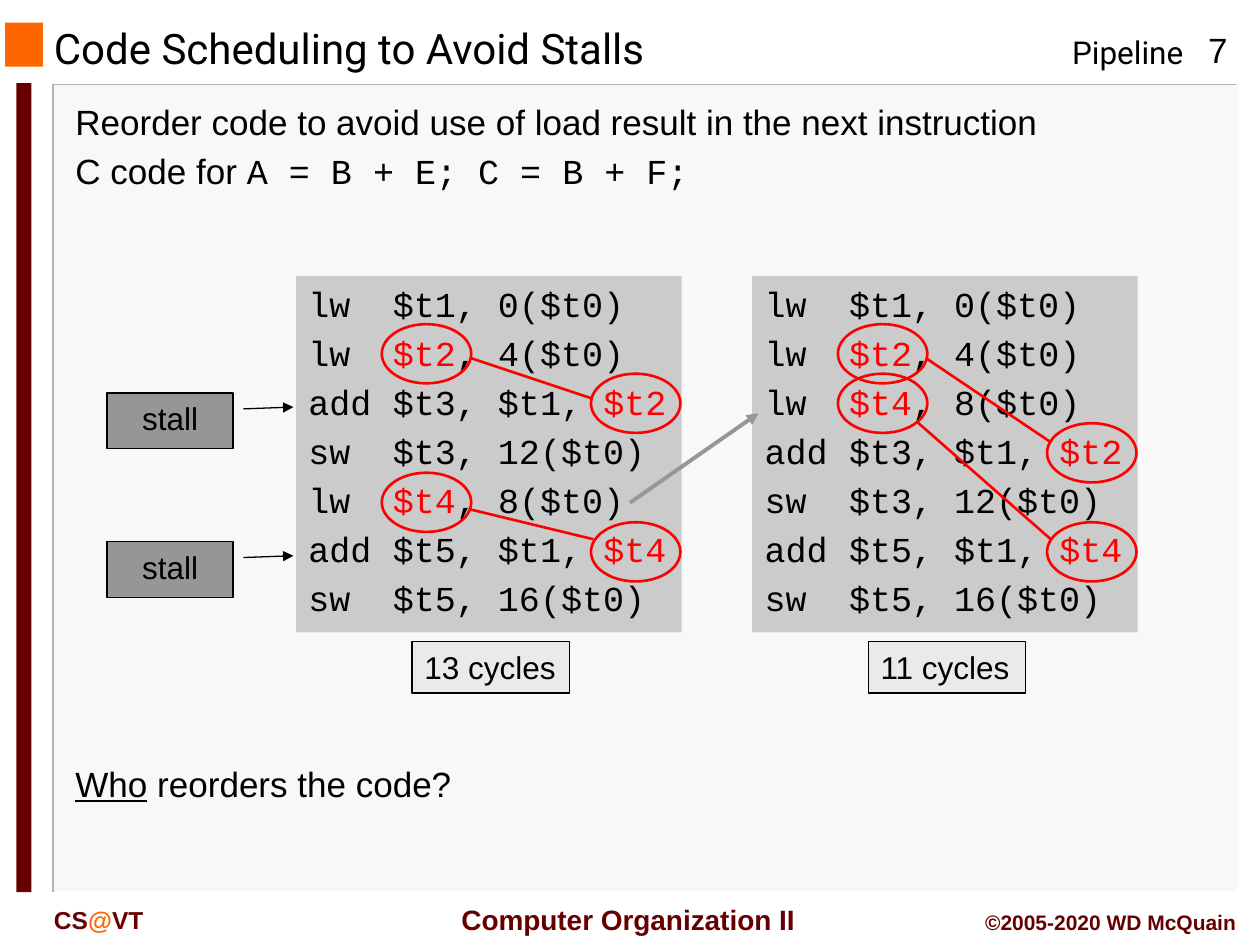
"""Build the slide on code scheduling to avoid pipeline stalls."""
from lxml import etree
from pptx import Presentation
from pptx.dml.color import RGBColor
from pptx.enum import shapes, text
from pptx.oxml import ns
from pptx.util import Inches, Pt

COLORS = {
    "black": "000000", "white": "FFFFFF", "red": "FF0000", "maroon": "660000",
    "orange": "FF6600", "panel": "F8F8F8", "edge": "B2B2B2", "code": "CBCBCB",
    "stall": "969696", "cycles": "EAEAEA",
}
SHAPE, ALIGN, ANCHOR = shapes.MSO_SHAPE, text.PP_ALIGN, text.MSO_ANCHOR
MONO = "Courier New"


class SlideBuilder:
    """Hold the style and the current slide."""

    def __init__(self, slide, font="Arial"):
        self.shapes = slide.shapes
        self.font = font

    def color(self, name):
        return RGBColor.from_string(COLORS[name])

    def outline(self, line, color, width, arrow=False):
        line.color.rgb = self.color(color)
        line.width = Pt(width)
        if arrow:
            ln = line._get_or_add_ln()
            etree.SubElement(ln, ns.qn("a:tailEnd"), type="triangle")

    def shape(self, kind, box, fill=None, line=None, width=0.75, arrow=False):
        sp = self.shapes.add_shape(kind, *map(Inches, box))
        sp.shadow.inherit = False
        if fill:
            sp.fill.solid()
            sp.fill.fore_color.rgb = self.color(fill)
        else:
            sp.fill.background()
        if line:
            self.outline(sp.line, line, width, arrow)
        else:
            sp.line.fill.background()
        return sp

    def polyline(self, points, color):
        points = [tuple(map(Inches, point)) for point in points]
        builder = self.shapes.build_freeform(*points[0], scale=1.0)
        builder.add_line_segments(points[1:], close=False)
        sp = builder.convert_to_shape()
        sp.shadow.inherit = False
        sp.fill.background()
        self.outline(sp.line, color, 1)

    def line(self, start, end, color, width, arrow=False):
        cx = self.shapes.add_connector(
            shapes.MSO_CONNECTOR.STRAIGHT, *map(Inches, start + end))
        self.outline(cx.line, color, width, arrow)
        etree.SubElement(cx._element.spPr, ns.qn("a:effectLst"))

    def add_text(self, sp, paragraphs, size, color="black", font=None, bold=False,
                 align=ALIGN.LEFT, anchor=ANCHOR.TOP, wrap=True, before=0, hang=0, tab=0):
        tf = sp.text_frame
        tf.word_wrap = wrap
        tf.vertical_anchor = anchor
        for i, runs in enumerate(paragraphs):
            p = tf.add_paragraph() if i else tf.paragraphs[0]
            p.alignment = align
            pPr = p._p.get_or_add_pPr()
            if hang:
                pPr.set("marL", str(Inches(hang)))
                pPr.set("indent", str(-Inches(hang)))
            if before:
                spacing = etree.SubElement(pPr, ns.qn("a:spcBef"))
                etree.SubElement(spacing, ns.qn("a:spcPct"), val=str(before * 1000))
            if tab:
                tabs = etree.SubElement(pPr, ns.qn("a:tabLst"))
                etree.SubElement(tabs, ns.qn("a:tab"), pos=str(Inches(tab)), algn="l")
            for words, extra in runs:
                r = p.add_run()
                r.text = words
                r.font.size = Pt(size)
                r.font.bold = bold
                r.font.name = extra.get("font", font or self.font)
                r.font.color.rgb = self.color(extra.get("color", color))
                r.font.underline = extra.get("underline")

    def label(self, box, paragraphs, size, **style):
        self.add_text(self.shapes.add_textbox(*map(Inches, box)), paragraphs, size, **style)

    def code(self, left, lines):
        paragraphs = [
            [(part, {"color": "red"} if i % 2 else {})
             for i, part in enumerate(line.split("*")) if part]
            for line in lines]
        sp = self.shape(SHAPE.RECTANGLE, (left, 2.19, 3.06, 2.83), "code")
        self.add_text(sp, paragraphs, 20, font=MONO, wrap=False, before=20, tab=0.67)

    def stall(self, top):
        sp = self.shape(SHAPE.LINE_CALLOUT_1, (0.85, top, 1, 0.44), "stall", "black", arrow=True)
        for i, value in enumerate((0.285, 1.083, 0.253, 1.479)):
            sp.adjustments[i] = value
        self.add_text(sp, [[("stall", {})]], 18, align=ALIGN.CENTER)

    def dependency(self, left, load_row, use_row, start, end):
        for offset, row in ((0.68, load_row), (2.34, use_row)):
            box = (left + offset, 2.18 + 0.393 * row, 0.71, 0.47)
            self.shape(SHAPE.OVAL, box, line="red", width=1.5)
        self.line(start, end, "red", 1.5)

    def cycles(self, left, words):
        sp = self.shape(SHAPE.RECTANGLE, (left, 5.09, 1.25, 0.41), "cycles", "black")
        self.add_text(sp, [[(words, {})]], 18, wrap=False)


def main():
    prs = Presentation()
    prs.slide_width, prs.slide_height = Inches(10), Inches(7.5)
    s = SlideBuilder(prs.slides.add_slide(prs.slide_layouts[6]))

    s.shape(SHAPE.RECTANGLE, (0.43, 0.67, 9.4, 6.41), "panel")
    s.polyline([(9.81, 0.67), (0.42, 0.67), (0.42, 7.08)], "edge")
    s.polyline([(9.83, 0.67), (9.83, 7.08), (0.44, 7.08)], "white")
    s.shape(SHAPE.RECTANGLE, (0.04, 0.18, 0.3, 0.35), "orange")
    s.shape(SHAPE.RECTANGLE, (0.13, 0.66, 0.12, 6.42), "maroon")

    s.label((8.41, 0.21, 1.09, 0.4), [[("Pipeline", {})]], 18, font="Roboto", wrap=False)
    s.label((9.33, 0.18, 0.67, 0.43), [[("7", {})]], 20, align=ALIGN.CENTER, before=50)
    footer = {"color": "maroon", "bold": True}
    s.label((3.48, 7.11, 2.95, 0.37), [[(" Computer Organization II", {})]], 16,
            align=ALIGN.CENTER, anchor=ANCHOR.MIDDLE, wrap=False, **footer)
    s.label((0.33, 7.13, 1.5, 0.33), [[("CS", {}), ("@", {"color": "orange"}), ("VT", {})]],
            14, before=50, **footer)
    s.label((7.33, 7.17, 2.58, 0.3), [[("©2005-2020 WD McQuain", {})]], 12,
            align=ALIGN.RIGHT, before=50, **footer)

    s.label((0.33, 0.19, 6.33, 0.38), [[("Code Scheduling to Avoid Stalls", {})]], 24,
            font="Roboto", anchor=ANCHOR.MIDDLE)
    body = {"size": 20, "before": 20, "hang": 0.38}
    s.label((0.5, 0.75, 9.25, 0.83), [
        [("Reorder code to avoid use of load result in the next instruction", {})],
        [("C code for ", {}), ("A = B + E; C = B + F;", {"font": MONO})],
    ], **body)

    before = [
        "lw\t$t1, 0($t0)",
        "lw\t*$t2*, 4($t0)",
        "add\t$t3, $t1, *$t2*",
        "sw\t$t3, 12($t0)",
        "lw\t*$t4*, 8($t0)",
        "add\t$t5, $t1, *$t4*",
        "sw\t$t5, 16($t0)",
    ]
    after = before[:2] + [before[4]] + before[2:4] + before[5:]
    before_left, after_left = 2.35, 5.97
    s.code(before_left, before)
    for top in (3.12, 4.3):
        s.stall(top)
    s.code(after_left, after)
    s.line((5, 3.99), (6.02, 3.28), "stall", 2.25, arrow=True)

    s.dependency(before_left, 1, 2, (3.73, 2.84), (4.69, 3.16))
    s.dependency(before_left, 4, 5, (3.72, 4.04), (4.71, 4.28))
    s.dependency(after_left, 1, 3, (7.36, 2.85), (8.34, 3.51))
    s.dependency(after_left, 2, 5, (7.28, 3.35), (8.34, 4.28))

    s.cycles(after_left + 0.92, "11 cycles")
    s.cycles(before_left + 0.92, "13 cycles")
    s.label((0.5, 6, 9.25, 0.44),
            [[("Who", {"underline": True}), (" reorders the code?", {})]], **body)
    prs.save("out.pptx")


if __name__ == "__main__":
    main()
